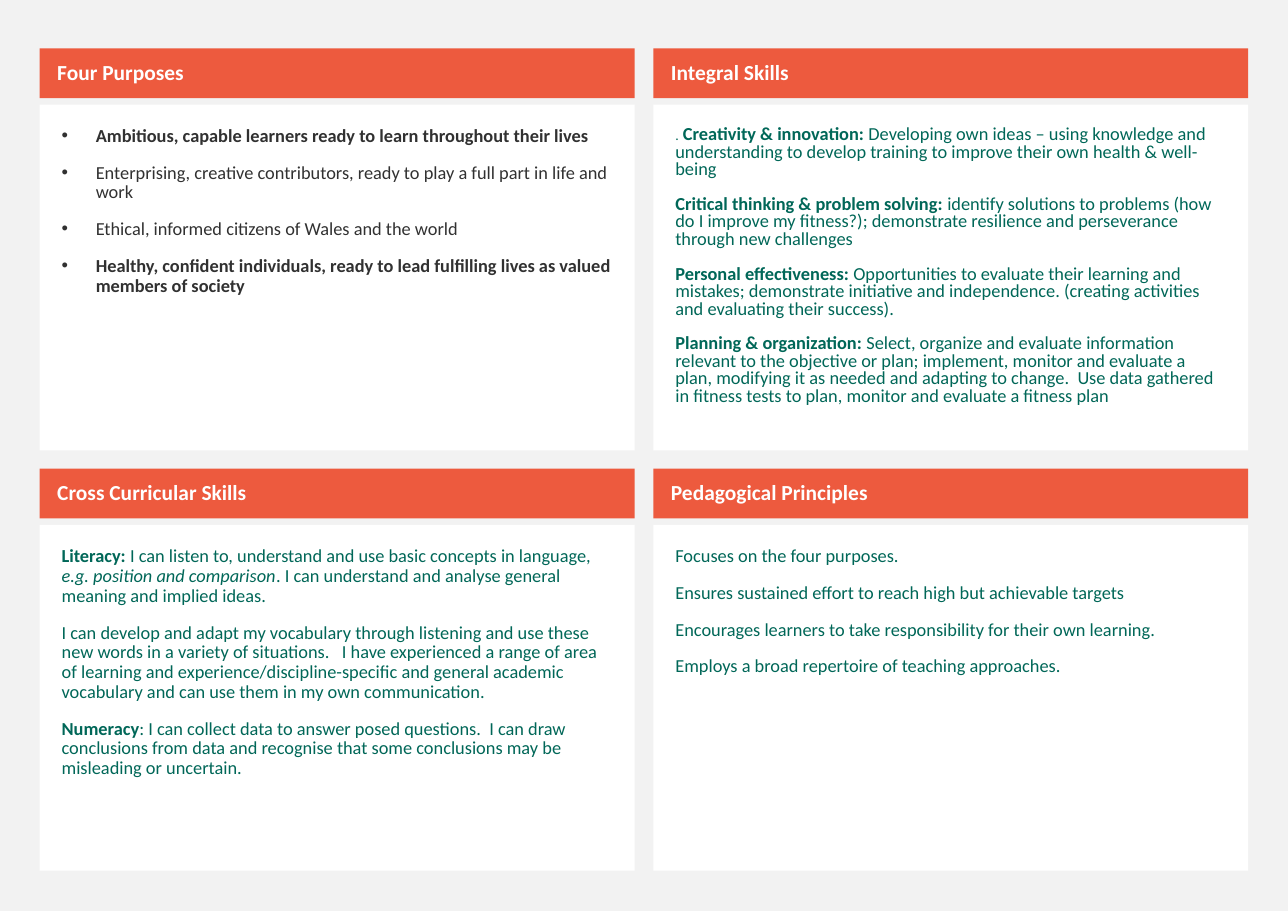
import pptx
import pptx.dml.color
import pptx.enum.shapes
import pptx.enum.text
import pptx.oxml.ns
import pptx.util
from lxml import etree

COLOURS = {
    "page": "F2F2F2",
    "panel": "FFFFFF",
    "banner": "ED5A3E",
    "title": "FFFFFF",
    "dark": "313131",
    "green": "006758",
}
COLUMNS, ROWS = 1169, 827
LEFT, TOP = 36, 44
PITCH_X, PITCH_Y = 557, 381.5
WIDTH, BANNER_HEIGHT = 540, 45
PANEL_DROP, PANEL_HEIGHT = 51, 314
INDENT = 31


def colour(name):
    return pptx.dml.color.RGBColor.from_string(COLOURS[name])


def write(paragraph, text, size=12, ink="green", bold=False, italic=False):
    run = paragraph.add_run()
    run.text = text
    run.font.name = "Calibri"
    run.font.size = pptx.util.Pt(size)
    run.font.color.rgb = colour(ink)
    run.font.bold = bold
    run.font.italic = italic


class Board:
    def __init__(self, deck):
        self.slide = deck.slides.add_slide(deck.slide_layouts[6])
        self.column = deck.slide_width / COLUMNS
        self.row = deck.slide_height / ROWS
        self.slide.background.fill.solid()
        self.slide.background.fill.fore_color.rgb = colour("page")

    def across(self, columns):
        return pptx.util.Emu(round(columns * self.column))

    def down(self, rows):
        return pptx.util.Emu(round(rows * self.row))

    def block(self, left, top, height, fill, insets, anchor):
        block = self.slide.shapes.add_shape(
            pptx.enum.shapes.MSO_SHAPE.RECTANGLE,
            self.across(left), self.down(top), self.across(WIDTH), self.down(height))
        block.shadow.inherit = False
        block.fill.solid()
        block.fill.fore_color.rgb = colour(fill)
        block.line.fill.background()
        frame = block.text_frame
        frame.word_wrap = True
        frame.vertical_anchor = anchor
        frame.margin_left, frame.margin_right = map(self.across, insets[:2])
        frame.margin_top = frame.margin_bottom = self.down(insets[2])
        return frame

    def banner(self, left, top, title):
        frame = self.block(left, top, BANNER_HEIGHT, "banner", (16, 10, 5),
                           pptx.enum.text.MSO_ANCHOR.MIDDLE)
        heading = frame.paragraphs[0]
        heading.alignment = pptx.enum.text.PP_ALIGN.LEFT
        heading.line_spacing = 0.9
        write(heading, title, size=14, ink="title", bold=True)

    def bullet(self, paragraph):
        properties = paragraph._p.get_or_add_pPr()
        properties.set("marL", str(self.across(INDENT)))
        properties.set("indent", str(-self.across(INDENT)))
        ns = pptx.oxml.ns.qn
        etree.SubElement(properties, ns("a:buFont")).set("typeface", "Arial")
        etree.SubElement(properties, ns("a:buChar")).set("char", "•")

    def panel(self, left, top, points, ink="green", spacing=0.9, bulleted=False):
        frame = self.block(left, top, PANEL_HEIGHT, "panel", (20, 20, 20),
                           pptx.enum.text.MSO_ANCHOR.TOP)
        for index, pieces in enumerate(points):
            point = frame.add_paragraph() if index else frame.paragraphs[0]
            if bulleted:
                self.bullet(point)
            point.alignment = pptx.enum.text.PP_ALIGN.LEFT
            point.line_spacing = spacing
            point.space_before = pptx.util.Pt(11 if index else 0)
            for text, style in pieces:
                write(point, text, ink=ink, **style)

    def quadrant(self, column, row, title, points, **style):
        left, top = LEFT + column * PITCH_X, TOP + row * PITCH_Y
        self.panel(left, top + PANEL_DROP, points, **style)
        self.banner(left, top, title)


PLAIN, BOLD, ITALIC = {}, {"bold": True}, {"italic": True}

FOUR_PURPOSES = [
    [("Ambitious, capable learners ready to learn throughout their lives", BOLD)],
    [("Enterprising, creative contributors, ready to play a full part in life and work", PLAIN)],
    [("Ethical, informed citizens of Wales and the world", PLAIN)],
    [("Healthy, confident individuals, ready to lead fulfilling lives as valued "
      "members of society", BOLD)],
]
INTEGRAL_SKILLS = [
    [(".", {"size": 9}), (" ", PLAIN), ("Creativity & innovation: ", BOLD),
     ("Developing own ideas – using knowledge and understanding to develop training "
      "to improve their own health & well-being", PLAIN)],
    [("Critical thinking & problem solving: ", BOLD),
     ("identify solutions to problems (how do I improve my fitness?); demonstrate "
      "resilience and perseverance through new challenges", PLAIN)],
    [("Personal effectiveness: ", BOLD),
     ("Opportunities to evaluate their learning and mistakes; demonstrate initiative "
      "and independence. (creating activities and evaluating their success).", PLAIN)],
    [("Planning & organization:", BOLD),
     (" Select, organize and evaluate information relevant to the objective or plan; "
      "implement, monitor and evaluate a plan, modifying it as needed and adapting to "
      "change.  Use data gathered in fitness tests to plan, monitor and evaluate "
      "a fitness plan", PLAIN)],
]
CROSS_CURRICULAR_SKILLS = [
    [("Literacy: ", BOLD),
     ("I can listen to, understand and use basic concepts in language, ", PLAIN),
     ("e.g. position and comparison", ITALIC),
     (". I can understand and analyse general meaning and implied ideas.", PLAIN)],
    [("I can develop and adapt my vocabulary through listening and use these new words "
      "in a variety of situations.   I have experienced a range of area of learning "
      "and experience/discipline-specific and general academic vocabulary and can use "
      "them in my own communication.", PLAIN)],
    [("Numeracy", BOLD),
     (": I can collect data to answer posed questions.  I can draw conclusions from "
      "data and recognise that some conclusions may be misleading or uncertain.", PLAIN)],
]
PEDAGOGICAL_PRINCIPLES = [
    [("Focuses on the four purposes.", PLAIN)],
    [("Ensures sustained effort to reach high but achievable targets", PLAIN)],
    [("Encourages learners to take responsibility for their own learning.", PLAIN)],
    [("Employs a broad repertoire of teaching approaches.", PLAIN)],
]


def main():
    deck = pptx.Presentation()
    deck.slide_width = pptx.util.Inches(11.69)
    deck.slide_height = pptx.util.Inches(8.27)
    board = Board(deck)
    board.quadrant(0, 0, "Four Purposes", FOUR_PURPOSES, ink="dark", bulleted=True)
    board.quadrant(1, 0, "Integral Skills", INTEGRAL_SKILLS, spacing=0.8)
    board.quadrant(0, 1, "Cross Curricular Skills", CROSS_CURRICULAR_SKILLS)
    board.quadrant(1, 1, "Pedagogical Principles", PEDAGOGICAL_PRINCIPLES)
    deck.save("out.pptx")


if __name__ == "__main__":
    main()
